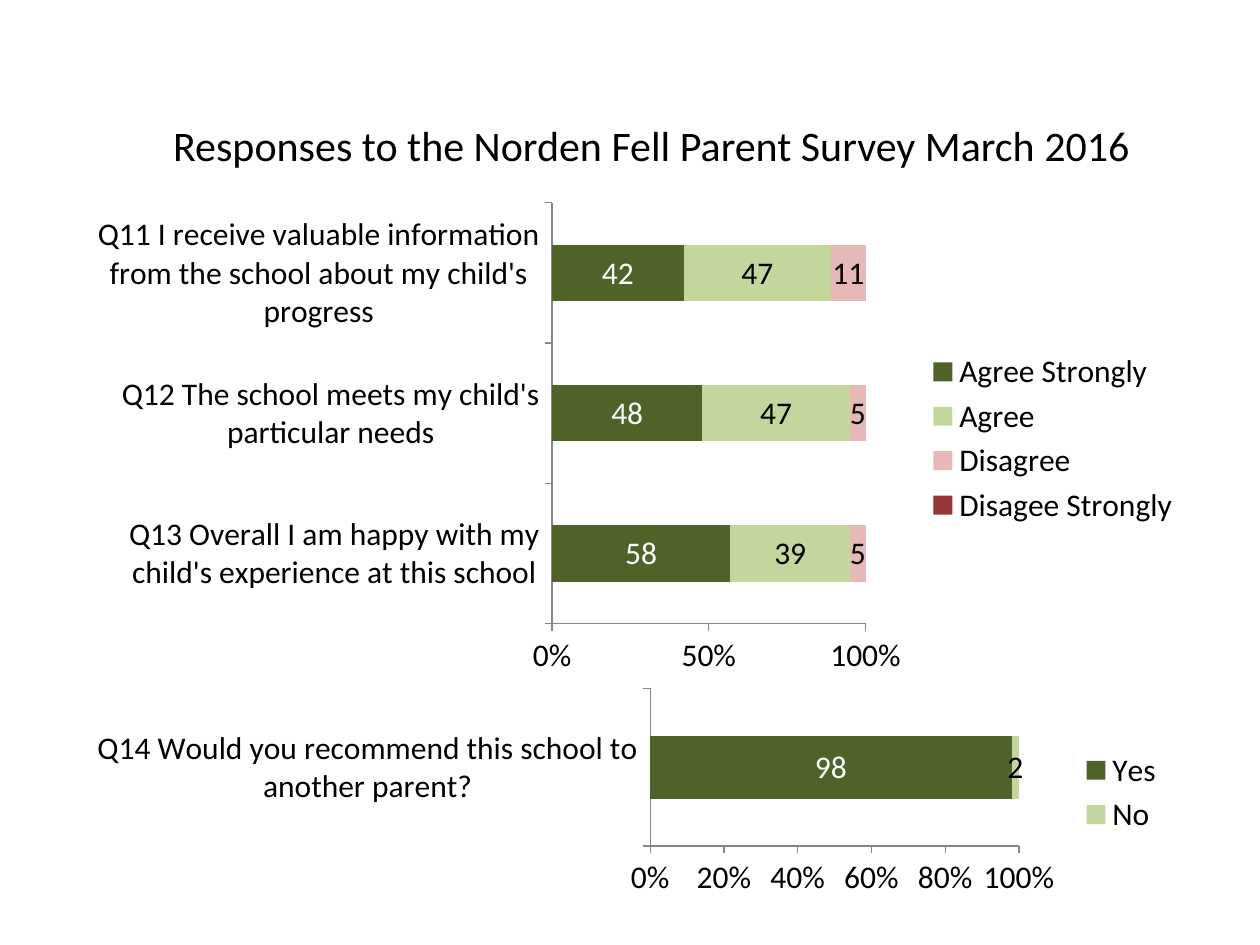
from pptx import Presentation
from pptx.chart.data import CategoryChartData as ChartData
from pptx.dml.color import RGBColor
from pptx.enum.chart import XL_CHART_TYPE as ChartType
from pptx.enum.chart import XL_LABEL_POSITION as LabelPosition
from pptx.enum.chart import XL_LEGEND_POSITION as LegendPosition
from pptx.enum.chart import XL_TICK_MARK as TickMark
from pptx.enum.text import MSO_ANCHOR as Anchor
from pptx.enum.text import PP_ALIGN as Align
from pptx.util import Cm, Pt

FONT = "Calibri"
BLACK, WHITE, GREY = "000000", "FFFFFF", "868686"
DARK_GREEN, LIGHT_GREEN, PINK, RED = "4F6228", "C3D69B", "E6B9B8", "953735"
TITLE = "Responses to the Norden Fell Parent Survey March 2016"
TITLE_PLACE = (2.13, 2.29, 20.9, 1.27)
CHARTS = [
    {
        "place": (1.52, 3.89, 22.53, 9.9),
        "step": 0.5,
        "questions": [
            "Q13 Overall I am happy with my child's experience at this school",
            "Q12 The school meets my child's particular needs",
            "Q11 I receive valuable information from the school about my child's progress",
        ],
        "answers": [
            ("Agree Strongly", (58, 48, 42), DARK_GREEN, WHITE),
            ("Agree", (39, 47, 47), LIGHT_GREEN, BLACK),
            ("Disagree", (5, 5, 11), PINK, BLACK),
            ("Disagee Strongly", (None, None, None), RED, BLACK),
        ],
    },
    {
        "place": (1.52, 13.79, 22.2, 4.37),
        "step": 0.2,
        "questions": ["Q14 Would you recommend this school to another parent?"],
        "answers": [
            ("Yes", (98,), DARK_GREEN, WHITE),
            ("No", (2,), LIGHT_GREEN, BLACK),
        ],
    },
]


def color(value):
    return RGBColor.from_string(value)


def set_font(font, size, value):
    font.name, font.size, font.bold = FONT, Pt(size), False
    font.color.rgb = color(value)


def add_title(page):
    title = page.shapes.title
    title.left, title.top, title.width, title.height = map(Cm, TITLE_PLACE)
    frame = title.text_frame
    frame.text = TITLE
    frame.word_wrap = False
    frame.vertical_anchor = Anchor.MIDDLE
    para = frame.paragraphs[0]
    para.alignment = Align.RIGHT
    set_font(para.runs[0].font, 24, BLACK)


def style_axes(chart, step):
    for axis in (chart.category_axis, chart.value_axis):
        axis.has_major_gridlines = False
        axis.major_tick_mark = TickMark.OUTSIDE
        axis.minor_tick_mark = TickMark.NONE
        axis.format.line.color.rgb = color(GREY)
        axis.format.line.width = Pt(0.75)
    scale = chart.value_axis
    scale.minimum_scale, scale.maximum_scale = 0, 1
    scale.major_unit = step
    scale.tick_labels.number_format = "0%"
    scale.tick_labels.number_format_is_linked = False


def add_survey_chart(page, survey):
    data = ChartData()
    data.categories = survey["questions"]
    for name, values, _, _ in survey["answers"]:
        data.add_series(name, values)
    frame = page.shapes.add_chart(
        ChartType.BAR_STACKED_100, *map(Cm, survey["place"]), data
    )
    chart = frame.chart
    set_font(chart.font, 18, BLACK)
    chart.has_title = False
    chart.has_legend = True
    chart.legend.position = LegendPosition.RIGHT
    chart.legend.include_in_layout = False
    plot = chart.plots[0]
    plot.gap_width, plot.overlap = 150, 100
    plot.vary_by_categories = False
    style_axes(chart, survey["step"])
    for series, (_, _, fill, ink) in zip(plot.series, survey["answers"]):
        series.format.fill.solid()
        series.format.fill.fore_color.rgb = color(fill)
        labels = series.data_labels
        labels.show_value = True
        labels.position = LabelPosition.CENTER
        set_font(labels.font, 18, ink)


def main():
    """Build the parent survey slide with its two stacked bar charts."""
    deck = Presentation()
    deck.slide_width, deck.slide_height = Cm(25.4), Cm(19.05)
    page = deck.slides.add_slide(deck.slide_layouts[5])
    for survey in CHARTS:
        add_survey_chart(page, survey)
    add_title(page)
    deck.save("out.pptx")


if __name__ == "__main__":
    main()
